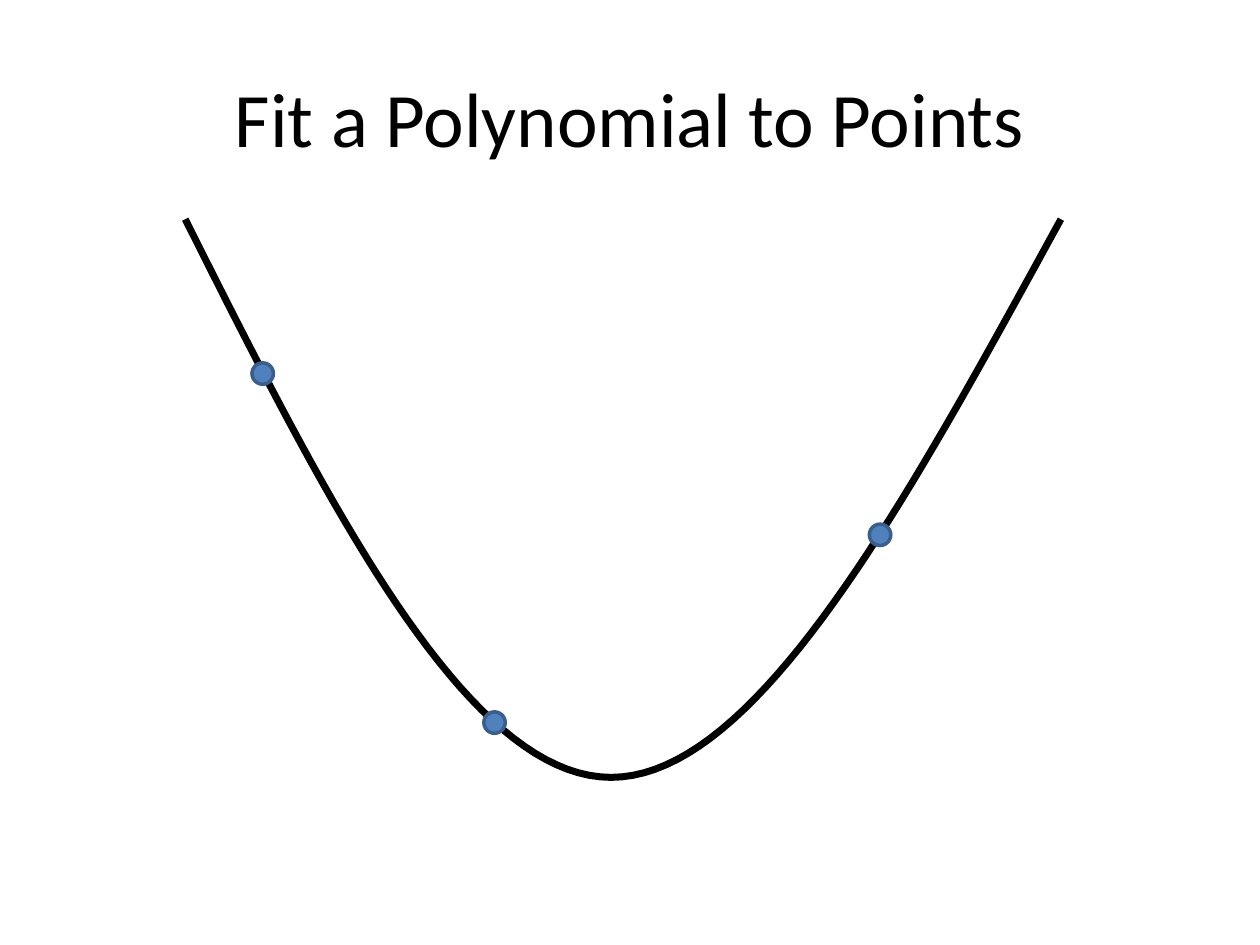
import pptx
import pptx.dml.color
import pptx.enum.shapes
import pptx.enum.text
import pptx.util

Inches = pptx.util.Inches
Pt = pptx.util.Pt
RGBColor = pptx.dml.color.RGBColor

BLACK = RGBColor(0x00, 0x00, 0x00)
BLUE = RGBColor(0x4F, 0x81, 0xBD)
DARK_BLUE = RGBColor(0x3A, 0x5F, 0x8C)

WIDTH, HEIGHT = 10, 7.5
MARGIN = 0.05 * WIDTH
DOT_SIZE = 0.17
STEPS = 40

# Each half of the curve: start, two control points, end (inches)
CURVE_HALVES = [
    [(1.47, 1.74), (2.58, 3.95), (3.69, 6.17), (4.85, 6.17)],
    [(4.85, 6.17), (6.01, 6.17), (7.21, 3.95), (8.42, 1.74)],
]
DOT_CORNERS = [(2, 2.88), (6.9, 4.16), (3.84, 5.65)]


def bezier_point(controls, t):
    """Return the point at share t of a cubic Bezier curve, in EMU."""
    weights = [(1 - t) ** 3, 3 * t * (1 - t) ** 2, 3 * t ** 2 * (1 - t), t ** 3]
    return tuple(
        Inches(sum(weight * value for weight, value in zip(weights, axis)))
        for axis in zip(*controls)
    )


def set_title(page, text):
    title = page.shapes.title
    title.left, title.top = Inches(MARGIN), Inches(0.04 * HEIGHT)
    title.width, title.height = Inches(WIDTH - 2 * MARGIN), Inches(HEIGHT / 6)
    title.text_frame.text = text
    title.text_frame.vertical_anchor = pptx.enum.text.MSO_ANCHOR.MIDDLE
    para = title.text_frame.paragraphs[0]
    para.alignment = pptx.enum.text.PP_ALIGN.CENTER
    para.font.name = "Calibri"
    para.font.size = Pt(44)
    para.font.color.rgb = BLACK


def add_curve(page, halves):
    points = [
        bezier_point(half, step / STEPS)
        for half in halves
        for step in range(1, STEPS + 1)
    ]
    builder = page.shapes.build_freeform(*bezier_point(halves[0], 0))
    builder.add_line_segments(points, close=False)
    curve = builder.convert_to_shape()
    curve.shadow.inherit = False
    curve.fill.background()
    curve.line.color.rgb = BLACK
    curve.line.width = Pt(4)


def add_dot(page, left, top):
    dot = page.shapes.add_shape(
        pptx.enum.shapes.MSO_SHAPE.OVAL,
        Inches(left), Inches(top), Inches(DOT_SIZE), Inches(DOT_SIZE),
    )
    dot.shadow.inherit = False
    dot.fill.solid()
    dot.fill.fore_color.rgb = BLUE
    dot.line.color.rgb = DARK_BLUE
    dot.line.width = Pt(2)


def main():
    deck = pptx.Presentation()
    deck.slide_width, deck.slide_height = Inches(WIDTH), Inches(HEIGHT)
    title_only = deck.slide_layouts.get_by_name("Title Only")
    page = deck.slides.add_slide(title_only)
    add_curve(page, CURVE_HALVES)
    set_title(page, "Fit a Polynomial to Points")
    for left, top in DOT_CORNERS:
        add_dot(page, left, top)
    deck.save("out.pptx")


if __name__ == "__main__":
    main()
